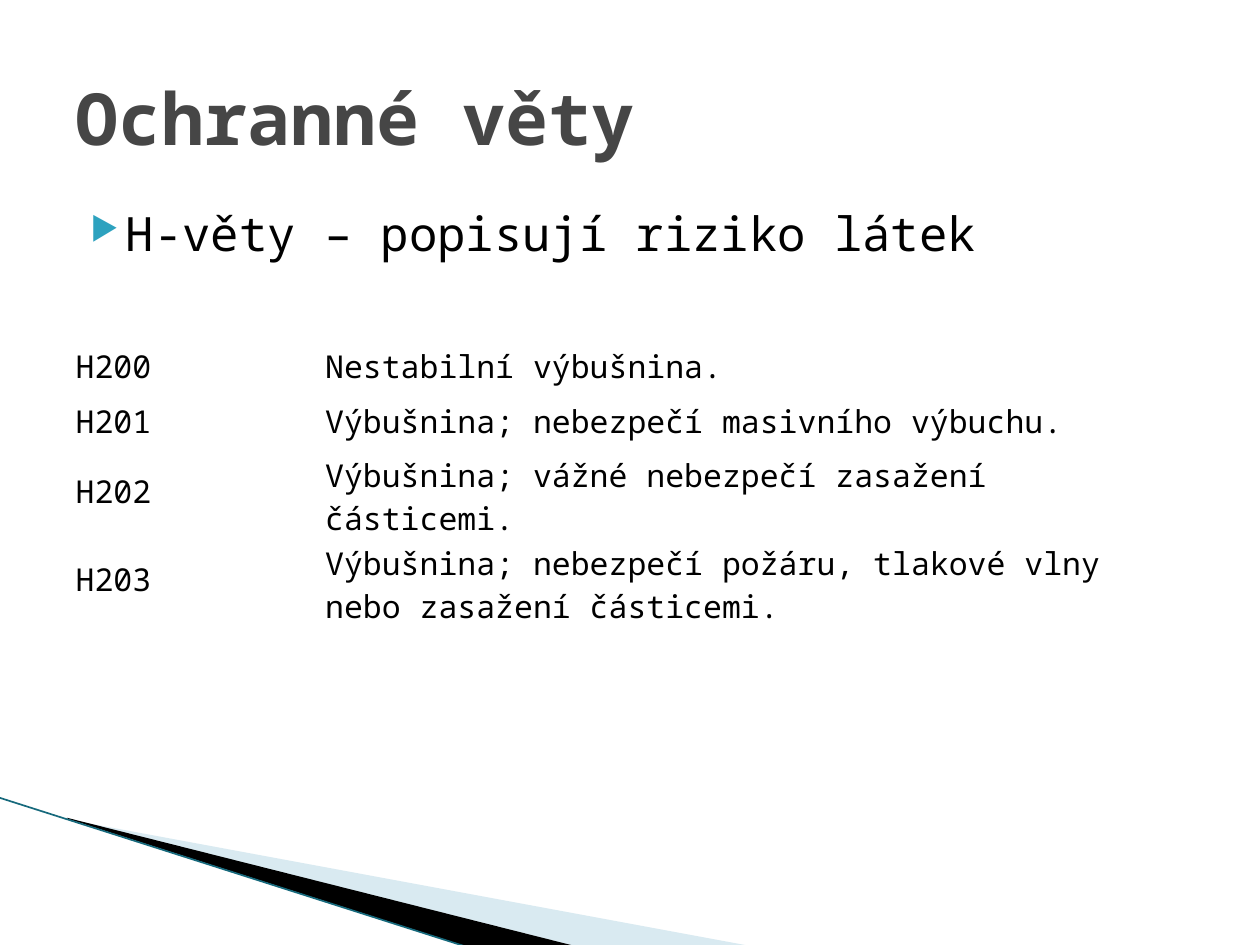
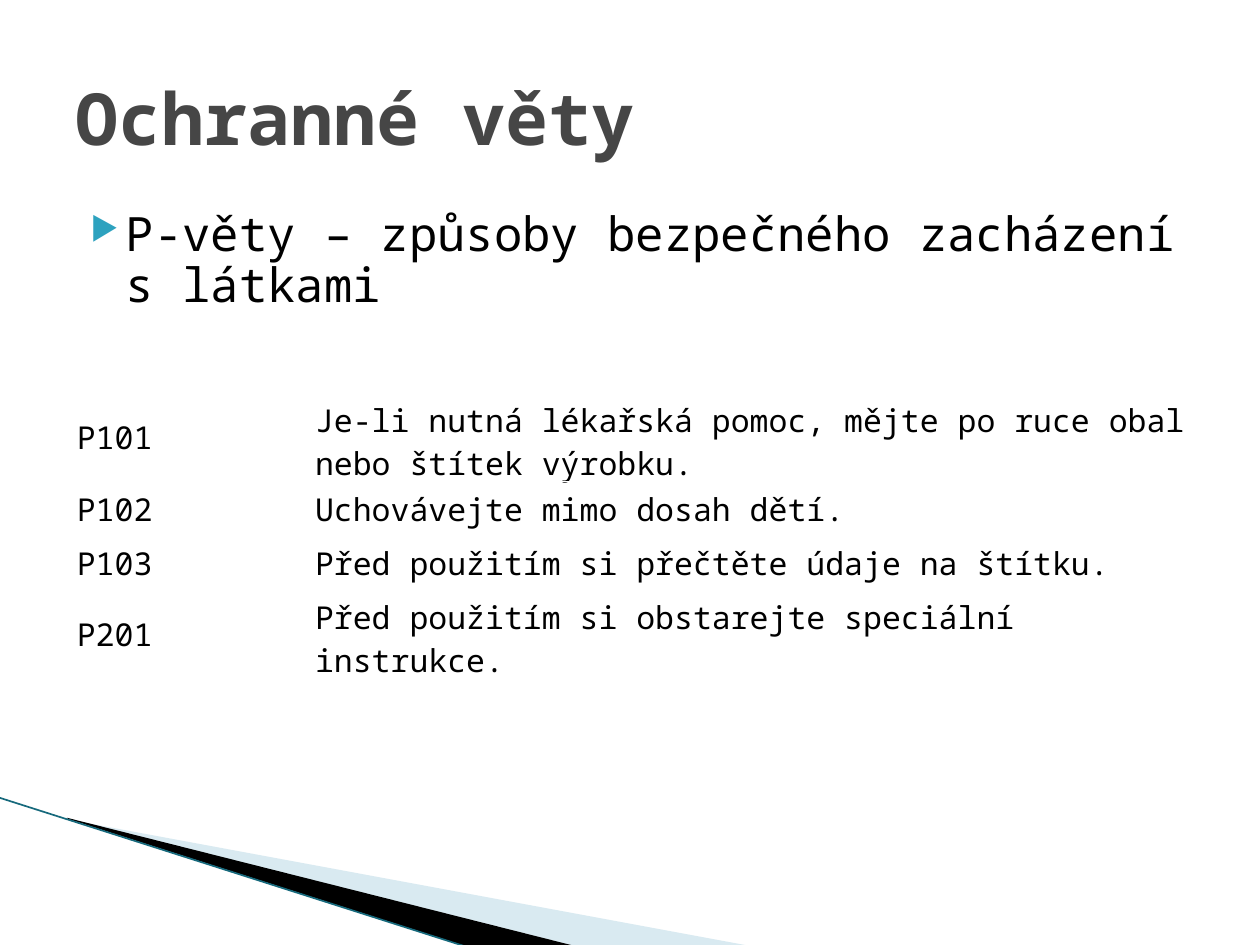
from dataclasses import dataclass

from lxml.etree import SubElement
from pptx import Presentation
from pptx.dml.color import RGBColor
from pptx.enum.shapes import MSO_CONNECTOR
from pptx.enum.text import MSO_ANCHOR
from pptx.oxml.ns import qn
from pptx.slide import Slide
from pptx.text.text import TextFrame, _Paragraph
from pptx.util import Pt

FONT = "Noto Sans Mono"
COLORS = {
    "text": "000000",
    "title": "464646",
    "bullet": "2DA2BF",
    "pale_band": "A0CBDC",
    "dark_band": "000000",
    "band_edge": "16697C",
}
TITLE = "Ochranné věty"
MARGIN = 36
CONTENT_WIDTH = 648
ROW_HEIGHT = 31


@dataclass(frozen=True)
class Band:
    color: str
    points: tuple[tuple[float, float], ...]
    opacity: int = 100


@dataclass(frozen=True)
class StatementSlide:
    heading: str
    table_left: float
    table_top: float
    code_width: float
    statements: dict[str, str]


BANDS = (
    Band("pale_band", ((39.6, 468.5), (428.4, 540.5), (328.3, 540.5), (39.6, 468)), 40),
    Band("dark_band", ((38.2, 467.3), (329, 540.7), (267.8, 541.2), (38.9, 468))),
)
STATEMENT_SLIDES = (
    StatementSlide(
        "H-věty – popisují riziko látek", 36, 193.7, 142.6,
        {
            "H200": "Nestabilní výbušnina.",
            "H201": "Výbušnina; nebezpečí masivního výbuchu.",
            "H202": "Výbušnina; vážné nebezpečí zasažení částicemi.",
            "H203": "Výbušnina; nebezpečí požáru, tlakové vlny nebo zasažení částicemi.",
        },
    ),
    StatementSlide(
        "P-věty – způsoby bezpečného zacházení s látkami", 36.7, 224.6, 136.1,
        {
            "P101": "Je-li nutná lékařská pomoc, mějte po ruce obal nebo štítek výrobku.",
            "P102": "Uchovávejte mimo dosah dětí.",
            "P103": "Před použitím si přečtěte údaje na štítku.",
            "P201": "Před použitím si obstarejte speciální instrukce.",
        },
    ),
)


def color(name: str) -> RGBColor:
    return RGBColor.from_string(COLORS[name])


def write(text_frame: TextFrame, text: str, size: float, color_name: str = "text",
          bold: bool = False) -> None:
    text_frame.text = text
    for run in text_frame.paragraphs[0].runs:
        run.font.name = FONT
        run.font.size = Pt(size)
        run.font.bold = bold
        run.font.color.rgb = color(color_name)


def add_text_frame(slide: Slide, top: float, height: float) -> TextFrame:
    text_box = slide.shapes.add_textbox(Pt(MARGIN), Pt(top), Pt(CONTENT_WIDTH), Pt(height))
    text_box.text_frame.word_wrap = True
    return text_box.text_frame


def add_bullet(paragraph: _Paragraph) -> None:
    properties = paragraph._p.get_or_add_pPr()
    properties.set("marL", str(Pt(28.8)))
    properties.set("indent", str(Pt(-20.2)))
    bullet_color = SubElement(properties, qn("a:buClr"))
    SubElement(bullet_color, qn("a:srgbClr"), val=COLORS["bullet"])
    SubElement(properties, qn("a:buSzPct"), val="68000")
    SubElement(properties, qn("a:buChar"), char="▶")


def add_band(slide: Slide, band: Band) -> None:
    start, *others = [(Pt(x), Pt(y)) for x, y in band.points]
    builder = slide.shapes.build_freeform(*start)
    builder.add_line_segments(others)
    shape = builder.convert_to_shape()
    shape.shadow.inherit = False
    shape.line.fill.background()
    shape.fill.solid()
    shape.fill.fore_color.rgb = color(band.color)
    if band.opacity < 100:
        fill_color = shape._element.spPr.find(f"{qn('a:solidFill')}/{qn('a:srgbClr')}")
        SubElement(fill_color, qn("a:alpha"), val=str(band.opacity * 1000))


def add_corner_decoration(slide: Slide) -> None:
    for band in BANDS:
        add_band(slide, band)
    edge = slide.shapes.add_connector(
        MSO_CONNECTOR.STRAIGHT, Pt(-0.5), Pt(455.8), Pt(267.1), Pt(541.2))
    edge.line.color.rgb = color("band_edge")
    edge.line.width = Pt(0.95)
    SubElement(edge._element.spPr, qn("a:effectLst"))


def add_heading(slide: Slide, heading: str) -> None:
    text_frame = add_text_frame(slide, 116.6, 356.4)
    write(text_frame, heading, 27)
    paragraph = text_frame.paragraphs[0]
    paragraph.line_spacing = 0.9
    add_bullet(paragraph)


def add_title(slide: Slide) -> None:
    text_frame = add_text_frame(slide, 21.6, 90)
    text_frame.vertical_anchor = MSO_ANCHOR.MIDDLE
    write(text_frame, TITLE, 41, "title", bold=True)


def add_statement_table(slide: Slide, content: StatementSlide) -> None:
    row_count = len(content.statements)
    table = slide.shapes.add_table(
        row_count, 2, Pt(content.table_left), Pt(content.table_top),
        Pt(CONTENT_WIDTH), Pt(ROW_HEIGHT * row_count)).table
    table.first_row = False
    table.horz_banding = False
    table.columns[0].width = Pt(content.code_width)
    table.columns[1].width = Pt(CONTENT_WIDTH - content.code_width)
    for row, statement in zip(table.rows, content.statements.items()):
        for cell, text in zip(row.cells, statement):
            cell.fill.background()
            cell.vertical_anchor = MSO_ANCHOR.MIDDLE
            write(cell.text_frame, text, 18)


def main() -> None:
    presentation = Presentation()
    presentation.slide_width = Pt(720)
    presentation.slide_height = Pt(540)
    for content in STATEMENT_SLIDES:
        slide = presentation.slides.add_slide(presentation.slide_layouts[6])
        add_corner_decoration(slide)
        add_heading(slide, content.heading)
        add_title(slide)
        add_statement_table(slide, content)
    presentation.save("out.pptx")


if __name__ == "__main__":
    main()
